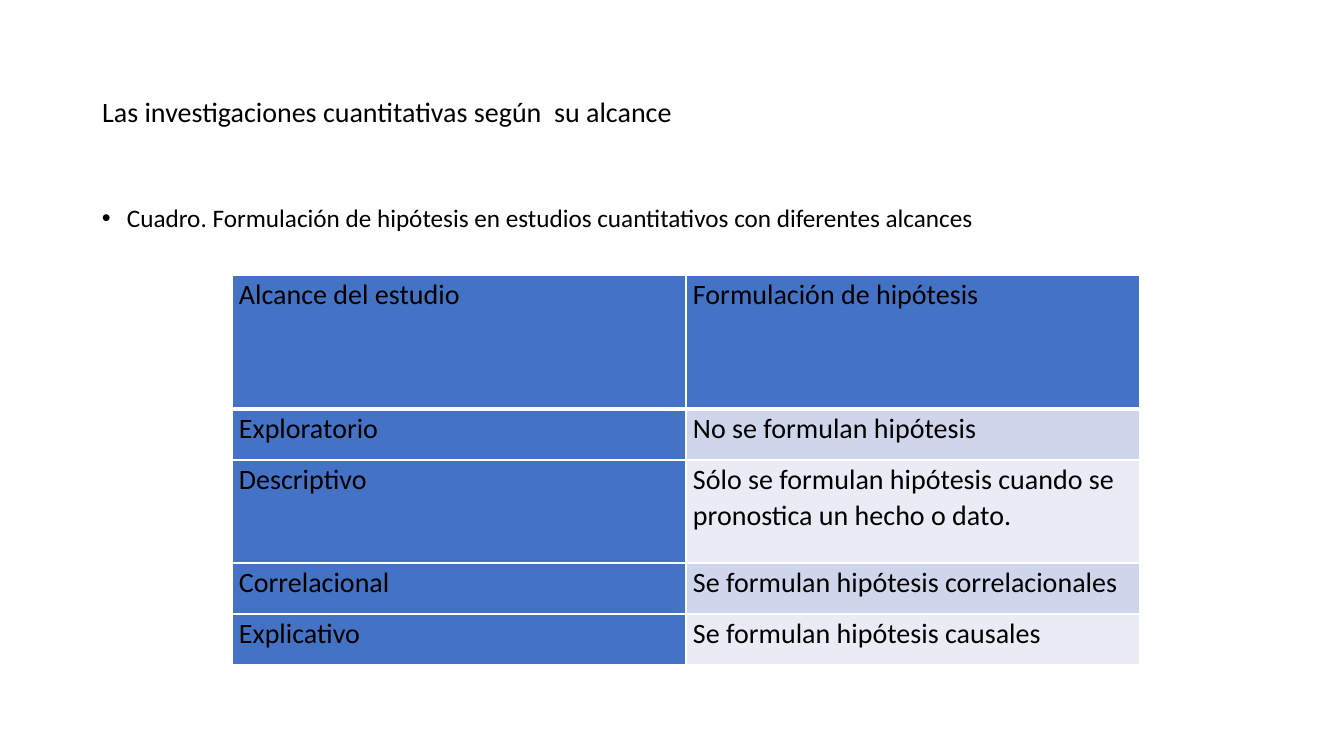
from dataclasses import dataclass

from pptx import Presentation
from pptx.dml.color import RGBColor
from pptx.enum.text import MSO_ANCHOR, MSO_AUTO_SIZE, PP_ALIGN
from pptx.oxml.xmlchemy import OxmlElement
from pptx.util import Emu, Pt

EMU_PER_PX = 914400 / 100.8


def px(length):
    return Emu(round(length * EMU_PER_PX))


@dataclass(frozen=True)
class Theme:
    font: str = "Calibri"
    text: str = "000000"
    accent: str = "4472C4"
    bands: tuple = ("CFD5EA", "E9EBF5")
    border: str = "FFFFFF"
    title_size: int = 20
    caption_size: int = 18
    table_size: int = 20


def apply_format(target, values):
    for name, value in values.items():
        setattr(target, name, value)


class SlideBuilder:
    def __init__(self, slide, theme):
        self.slide = slide
        self.theme = theme

    def add_text(self, frame, text, size, paragraph_format):
        paragraph = frame.paragraphs[0]
        run = paragraph.add_run()
        run.text = text
        apply_format(run.font, {"name": self.theme.font, "size": Pt(size), "bold": False})
        run.font.color.rgb = RGBColor.from_string(self.theme.text)
        apply_format(paragraph, {"alignment": PP_ALIGN.LEFT, **paragraph_format})
        return paragraph

    def place(self, shape, box):
        apply_format(shape, dict(zip(("left", "top", "width", "height"), map(px, box))))

    def title(self, text, box):
        heading = self.slide.shapes.title
        self.place(heading, box)
        apply_format(heading.text_frame, {
            "word_wrap": True,
            "auto_size": MSO_AUTO_SIZE.NONE,
            "vertical_anchor": MSO_ANCHOR.MIDDLE,
        })
        self.add_text(heading.text_frame, text, self.theme.title_size, {"line_spacing": 0.9})

    def bullet(self, text, box, indent):
        frame = self.slide.shapes.add_textbox(*map(px, box)).text_frame
        frame.word_wrap = True
        paragraph = self.add_text(frame, text, self.theme.caption_size,
                                  {"line_spacing": 0.9, "space_before": Pt(10)})
        properties = paragraph._p.get_or_add_pPr()
        properties.set("marL", str(px(indent)))
        properties.set("indent", str(-px(indent)))
        for tag, attribute, value in (("a:buFont", "typeface", "Arial"),
                                      ("a:buChar", "char", "•")):
            mark = OxmlElement(tag)
            mark.set(attribute, value)
            properties.append(mark)

    def cell_borders(self, cell, widths):
        properties = cell._tc.get_or_add_tcPr()
        for side, width in widths.items():
            line = OxmlElement(f"a:ln{side}")
            line.set("w", str(Pt(width)))
            fill = OxmlElement("a:solidFill")
            color = OxmlElement("a:srgbClr")
            color.set("val", self.theme.border)
            fill.append(color)
            line.append(fill)
            properties.append(line)

    def table(self, rows, left, top, column_width, row_heights):
        columns = len(rows[0])
        grid = self.slide.shapes.add_table(
            len(rows), columns, px(left), px(top),
            px(column_width * columns), px(sum(row_heights))).table
        apply_format(grid, {"first_row": True, "first_col": True, "horz_banding": False})
        for column in grid.columns:
            column.width = px(column_width)
        for r, (texts, height) in enumerate(zip(rows, row_heights)):
            grid.rows[r].height = px(height)
            for c, text in enumerate(texts):
                cell = grid.cell(r, c)
                apply_format(cell, {"margin_left": px(7), "margin_right": px(7),
                                    "margin_top": 0, "margin_bottom": 0})
                self.add_text(cell.text_frame, text, self.theme.table_size,
                              {"line_spacing": 1.07, "space_after": Pt(8)})
                # The rule under the header row is heavier
                self.cell_borders(cell, {"L": 1, "R": 1, "T": 3 if r == 1 else 1,
                                         "B": 3 if r == 0 else 1})
                # Header row and first column share the accent, the rest is banded
                is_header = r == 0 or c == 0
                shade = self.theme.accent if is_header else self.theme.bands[(r - 1) % 2]
                cell.fill.solid()
                cell.fill.fore_color.rgb = RGBColor.from_string(shade)


HYPOTHESES_BY_SCOPE = [
    ("Alcance del estudio", "Formulación de hipótesis"),
    ("Exploratorio", "No se formulan hipótesis"),
    ("Descriptivo", "Sólo se formulan hipótesis cuando se pronostica un hecho o dato."),
    ("Correlacional", "Se formulan hipótesis correlacionales"),
    ("Explicativo", "Se formulan hipótesis causales"),
]


def main():
    presentation = Presentation()
    apply_format(presentation, {"slide_width": px(1344), "slide_height": px(756)})
    title_only = presentation.slide_layouts[5]
    builder = SlideBuilder(presentation.slides.add_slide(title_only), Theme())

    # Heading and caption
    builder.title("Las investigaciones cuantitativas según  su alcance", (92, 40, 1159, 146))
    builder.bullet(
        "Cuadro. Formulación de hipótesis en estudios cuantitativos con diferentes alcances",
        (92, 201, 1159, 480), indent=25)

    # Hypotheses for each study scope
    builder.table(HYPOTHESES_BY_SCOPE, left=232, top=275, column_width=454,
                  row_heights=(134, 51, 103, 51, 51))

    presentation.save("out.pptx")


if __name__ == "__main__":
    main()
